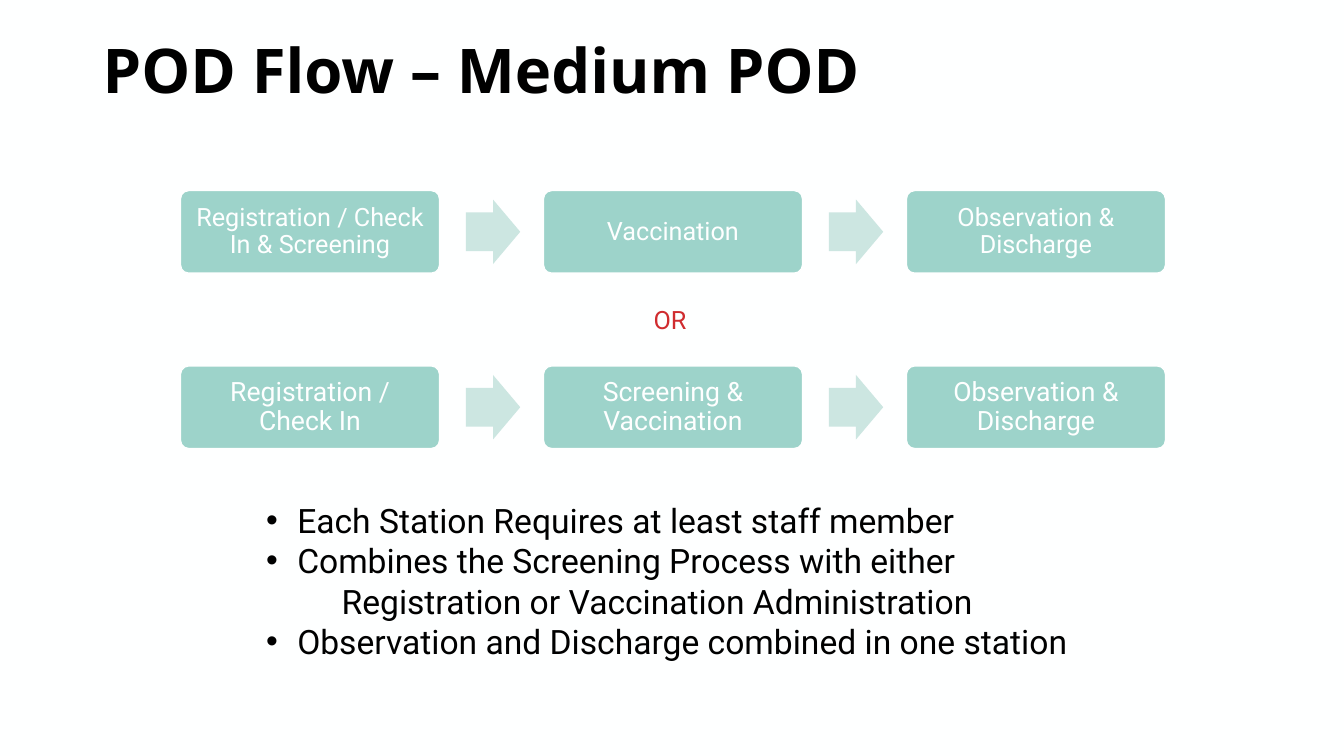
from pptx import Presentation
from pptx.dml.color import RGBColor
from pptx.enum.shapes import MSO_SHAPE as Shape
from pptx.enum.text import MSO_ANCHOR as Anchor, PP_ALIGN as Align
from pptx.oxml.ns import qn
from pptx.util import Inches, Pt
from lxml.etree import SubElement


def color(hex_value):
    return RGBColor.from_string(hex_value)


def write(paragraph, text, size=18, font="Roboto", ink="000000", bold=False,
          align=Align.LEFT, spacing=1.0):
    paragraph.alignment = align
    paragraph.line_spacing = spacing
    run = paragraph.add_run()
    run.text = text
    run.font.size = Pt(size)
    run.font.name = font
    run.font.bold = bold
    run.font.color.rgb = color(ink)


class FlowSlide:
    PAPER, BOX, ARROW, ACCENT = "FEFFFF", "9DD3CA", "CCE6E1", "D02C2F"

    def __init__(self, presentation):
        self.slide = presentation.slides.add_slide(presentation.slide_layouts[6])
        fill = self.slide.background.fill
        fill.solid()
        fill.fore_color.rgb = color(self.PAPER)

    def frame(self, left, top, width, height, anchor=Anchor.TOP):
        box = self.slide.shapes.add_textbox(
            Inches(left), Inches(top), Inches(width), Inches(height))
        box.text_frame.word_wrap = True
        box.text_frame.vertical_anchor = anchor
        return box.text_frame

    def label(self, text, left, top, width, height, anchor=Anchor.TOP, **style):
        write(self.frame(left, top, width, height, anchor).paragraphs[0], text, **style)

    def shape(self, kind, left, top, width, height, fill, adjustments):
        shape = self.slide.shapes.add_shape(
            kind, Inches(left), Inches(top), Inches(width), Inches(height))
        shape.shadow.inherit = False
        shape.fill.solid()
        shape.fill.fore_color.rgb = color(fill)
        shape.line.fill.background()
        for index, value in enumerate(adjustments):
            shape.adjustments[index] = value
        return shape

    def station(self, text, left, top, size):
        station = self.shape(Shape.ROUNDED_RECTANGLE, left, top, 2.57, 0.82,
                             self.BOX, [0.1])
        station.line.color.rgb = color(self.PAPER)
        station.line.width = Pt(1)
        frame = station.text_frame
        frame.word_wrap = True
        frame.vertical_anchor = Anchor.MIDDLE
        frame.margin_left = frame.margin_right = Inches(0.11)
        frame.margin_top = frame.margin_bottom = Inches(0.08)
        write(frame.paragraphs[0], text, size=size, ink=self.PAPER,
              align=Align.CENTER, spacing=0.9)

    def flow(self, stations, top, size):
        left, pitch = 1.79, 3.6
        for index, text in enumerate(stations):
            x = left + index * pitch
            if index:
                self.shape(Shape.RIGHT_ARROW, x - 0.77, top + 0.09, 0.54, 0.64,
                           self.ARROW, [0.6, 0.5])
            self.station(text, x, top, size)

    def bullets(self, items, left, top, width, height):
        frame = self.frame(left, top, width, height)
        for index, (text, bulleted) in enumerate(items):
            paragraph = frame.add_paragraph() if index else frame.paragraphs[0]
            properties = paragraph._p.get_or_add_pPr()
            if bulleted:
                properties.set("marL", str(Inches(0.31)))
                properties.set("indent", str(-Inches(0.31)))
                SubElement(properties, qn("a:buFont")).set("typeface", "Arial")
                SubElement(properties, qn("a:buChar")).set("char", "•")
            else:
                paragraph.level = 1
                properties.set("marL", str(Inches(0.75)))
                properties.set("indent", "0")
            write(paragraph, text, size=24)


def main():
    presentation = Presentation()
    presentation.slide_width = Inches(13.33)
    presentation.slide_height = Inches(7.5)
    pod = FlowSlide(presentation)

    # Title
    pod.label("POD Flow – Medium POD", 0.92, 0, 11.5, 1.45, anchor=Anchor.MIDDLE,
              size=44, font="Open Sans", bold=True, spacing=0.9)

    # Two alternative flows
    pod.flow(["Registration / Check In & Screening", "Vaccination",
              "Observation & Discharge"], top=1.89, size=18)
    pod.label("OR", 6.36, 2.97, 0.57, 0.4, ink=pod.ACCENT, align=Align.CENTER)
    pod.flow(["Registration / Check In", "Screening & Vaccination",
              "Observation & Discharge"], top=3.63, size=19)

    # Staffing remarks
    pod.bullets([
        ("Each Station Requires at least staff member", True),
        ("Combines the Screening Process with either", True),
        ("Registration or Vaccination Administration", False),
        ("Observation and Discharge combined in one station", True),
    ], 2.54, 4.91, 8.25, 1.72)

    presentation.save("out.pptx")


if __name__ == "__main__":
    main()
